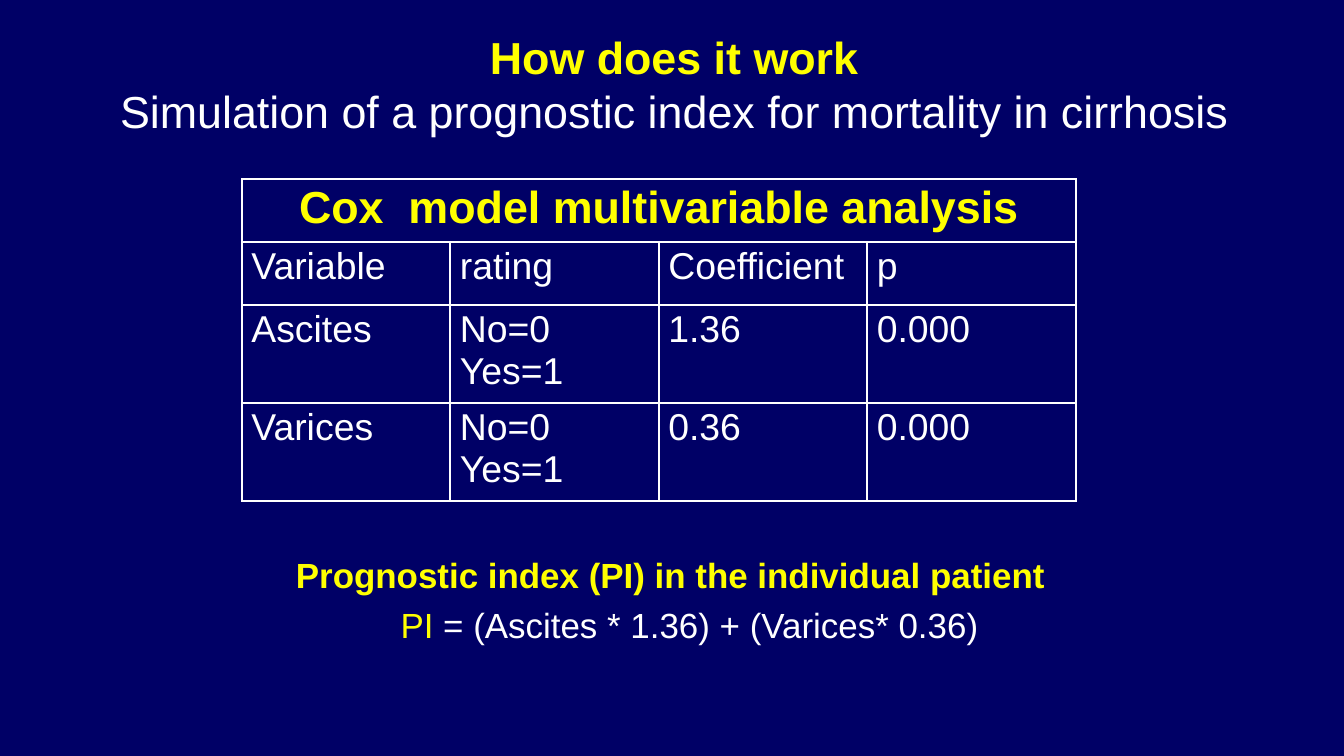
from lxml.etree import SubElement
from pptx import Presentation
from pptx.dml.color import RGBColor
from pptx.enum.text import MSO_ANCHOR, PP_ALIGN
from pptx.oxml.ns import qn
from pptx.util import Cm, Pt

# Content
COLORS = {"background": "000066", "accent": "FFFF00", "body": "FFFFFF"}
FONT = "Arial"
TITLE = [("How does it work\v", "accent", True),
         ("Simulation of a prognostic index for mortality in cirrhosis", "body", False)]
TABLE_HEADING = "Cox  model multivariable analysis"
TABLE_ROWS = [
    ("Variable", "rating", "Coefficient", "p"),
    ("Ascites", "No=0\nYes=1", "1.36", "0.000"),
    ("Varices", "No=0\nYes=1", "0.36", "0.000"),
]
ROW_HEIGHTS = [1.19, 1.19, 1.74, 1.74]
COLUMN_WIDTH = 3.94
INDEX_HEADING = [("Prognostic index (PI) in the individual patient", "accent", True)]
INDEX_FORMULA = [("PI", "accent", False),
                 (" = (Ascites * 1.36) + (Varices* 0.36)", "body", False)]


def color(name):
    return RGBColor.from_string(COLORS[name])


def style(font, size, color_name, bold):
    font.name, font.size, font.bold = FONT, Pt(size), bold
    font.color.rgb = color(color_name)


def add_text(left, top, width, height, runs, size, align, anchor):
    frame = slide.shapes.add_textbox(Cm(left), Cm(top), Cm(width), Cm(height)).text_frame
    frame.word_wrap = True
    frame.vertical_anchor = anchor
    paragraph = frame.paragraphs[0]
    paragraph.alignment = align
    for text, color_name, bold in runs:
        run = paragraph.add_run()
        run.text = text.rstrip("\v")
        style(run.font, size, color_name, bold)
        if text.endswith("\v"):
            paragraph.add_line_break()


def add_borders(cell):
    properties = cell._tc.get_or_add_tcPr()
    for position, side in enumerate(("a:lnL", "a:lnR", "a:lnT", "a:lnB")):
        line = SubElement(properties, qn(side), w=str(Pt(1)))
        fill = SubElement(line, qn("a:solidFill"))
        SubElement(fill, qn("a:srgbClr"), val=COLORS["body"])
        properties.insert(position, line)


def fill_cell(cell, text, size, color_name, bold, align):
    cell.text = text
    cell.fill.background()
    cell.margin_left = cell.margin_right = Cm(0.18)
    cell.margin_top = cell.margin_bottom = Cm(0.08)
    for paragraph in cell.text_frame.paragraphs:
        paragraph.alignment = align
        style(paragraph.font, size, color_name, bold)


# Slide
deck = Presentation()
deck.slide_width, deck.slide_height = Cm(25.4), Cm(14.29)
slide = deck.slides.add_slide(deck.slide_layouts[6])
slide.background.fill.solid()
slide.background.fill.fore_color.rgb = color("background")

# Title
add_text(0.41, 0.53, 24.66, 2.11, TITLE, 24, PP_ALIGN.CENTER, MSO_ANCHOR.MIDDLE)

# Cox model table
column_count = len(TABLE_ROWS[0])
cox_table = slide.shapes.add_table(
    len(ROW_HEIGHTS), column_count, Cm(4.57), Cm(3.38),
    Cm(COLUMN_WIDTH * column_count), Cm(sum(ROW_HEIGHTS))).table
cox_table.first_row = cox_table.horz_banding = False
for row, height in zip(cox_table.rows, ROW_HEIGHTS):
    row.height = Cm(height)
    for cell in row.cells:
        add_borders(cell)
cox_table.cell(0, 0).merge(cox_table.cell(0, column_count - 1))
fill_cell(cox_table.cell(0, 0), TABLE_HEADING, 24, "accent", True, PP_ALIGN.CENTER)
for row_number, values in enumerate(TABLE_ROWS, start=1):
    for column_number, value in enumerate(values):
        fill_cell(cox_table.cell(row_number, column_number), value,
                  20, "body", False, PP_ALIGN.LEFT)

# Prognostic index
add_text(4.57, 10.21, 16.21, 1.3, INDEX_HEADING, 18.7, PP_ALIGN.CENTER, MSO_ANCHOR.MIDDLE)
add_text(7.32, 11.28, 12.95, 1.07, INDEX_FORMULA, 18.7, PP_ALIGN.LEFT, MSO_ANCHOR.TOP)

deck.save("out.pptx")
